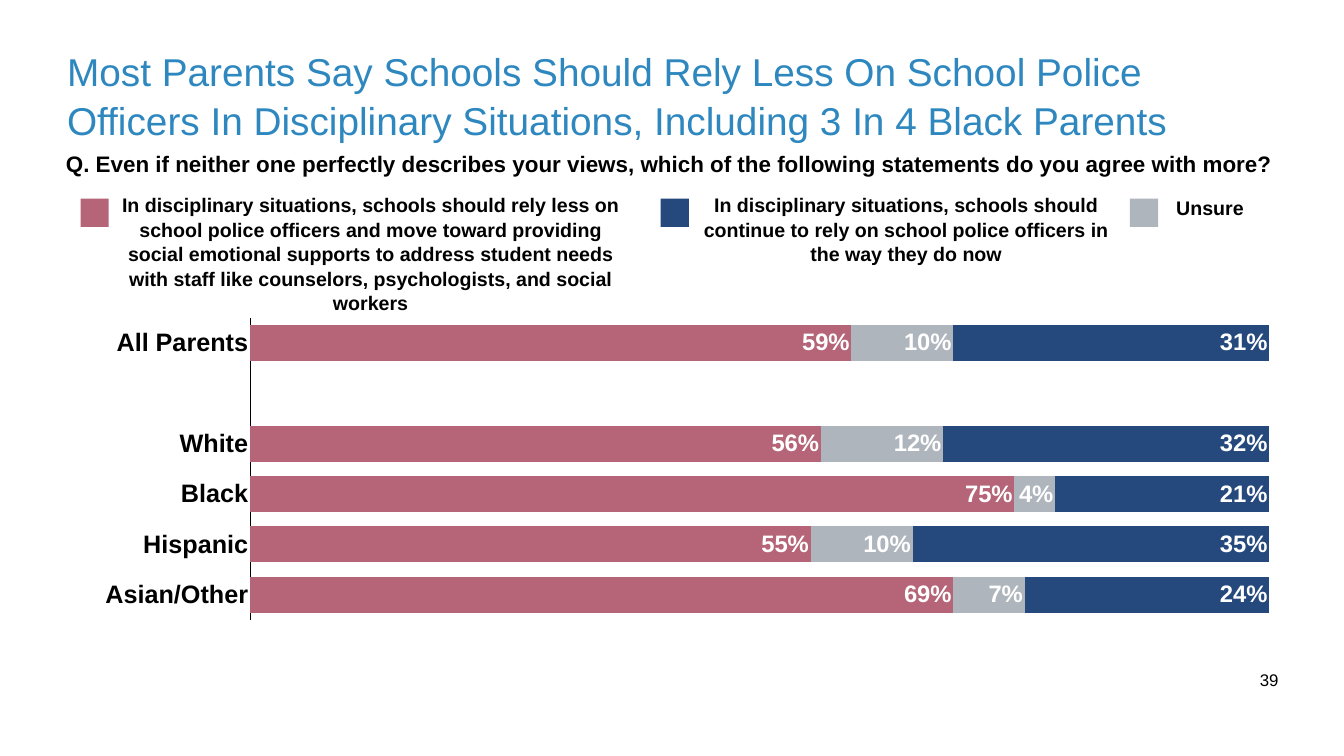
from lxml import etree
from pptx import Presentation
from pptx.chart.data import CategoryChartData
from pptx.dml.color import RGBColor
from pptx.enum.chart import XL_CHART_TYPE as ChartType
from pptx.enum.chart import XL_LABEL_POSITION as LabelPosition
from pptx.enum.chart import XL_TICK_LABEL_POSITION as TickLabelPosition
from pptx.enum.chart import XL_TICK_MARK as TickMark
from pptx.enum.shapes import MSO_SHAPE as Shape
from pptx.enum.text import MSO_ANCHOR as Anchor
from pptx.enum.text import PP_ALIGN as Align
from pptx.oxml.ns import qn
from pptx.util import Cm, Pt

FONT = "Arial"
BLACK, WHITE, TITLE_BLUE = "000000", "FFFFFF", "2E88BF"
ROSE, GREY, NAVY = "B56577", "AEB5BC", "25497C"

CATEGORIES = ["All Parents", "", "White", "Black", "Hispanic", "Asian/Other"]
SERIES = [
    ("Rely less", ROSE, [0.59, None, 0.56, 0.75, 0.55, 0.69]),
    ("Unsure", GREY, [0.10, None, 0.12, 0.04, 0.10, 0.07]),
    ("Continue to rely", NAVY, [0.31, None, 0.32, 0.21, 0.35, 0.24]),
]
# colour, swatch left, text, text box (left, top, width, height)
LEGEND = [
    (ROSE, 4.06,
     "In disciplinary situations, schools should rely less on school police "
     "officers and move toward providing social emotional supports to address "
     "student needs with staff like counselors, psychologists, and social workers",
     (5.49, 9.5, 26.37, 5.18)),
    (NAVY, 33.3,
     "In disciplinary situations, schools should continue to rely on school "
     "police officers in the way they do now",
     (34.72, 9.5, 21.89, 3.89)),
    (GREY, 56.95, "Unsure", (54.61, 9.63, 12.75, 1.55)),
]
SWATCH_TOP, SWATCH_SIZE = 10.01, 1.42
PLOT_AREA = {"x": 0.152, "y": 0.084, "w": 0.843, "h": 0.866}


def rgb(color):
    return RGBColor.from_string(color)


def style_font(font, size, color=BLACK, bold=False):
    font.name = FONT
    font.size = Pt(size)
    font.bold = bold
    font.color.rgb = rgb(color)


def add_text(slide, text, box, size, color=BLACK, bold=False,
             align=Align.LEFT, anchor=Anchor.TOP, wrap=True):
    shape = slide.shapes.add_textbox(*map(Cm, box))
    frame = shape.text_frame
    frame.word_wrap = wrap
    frame.vertical_anchor = anchor
    frame.margin_left = frame.margin_right = Cm(0.2)
    frame.margin_top = frame.margin_bottom = Cm(0.2)
    paragraph = frame.paragraphs[0]
    paragraph.alignment = align
    paragraph.line_spacing = 1.04
    run = paragraph.add_run()
    run.text = text
    style_font(run.font, size, color, bold)


def add_swatch(slide, left, color):
    shape = slide.shapes.add_shape(
        Shape.RECTANGLE, Cm(left), Cm(SWATCH_TOP), Cm(SWATCH_SIZE), Cm(SWATCH_SIZE))
    shape.shadow.inherit = False
    shape.fill.solid()
    shape.fill.fore_color.rgb = rgb(color)
    shape.line.fill.background()


def set_plot_area(chart):
    """Fix the inner plot area as fractions of the chart."""
    plot_area = chart.element.find(".//" + qn("c:plotArea"))
    for old_layout in plot_area.findall(qn("c:layout")):
        plot_area.remove(old_layout)
    layout = etree.Element(qn("c:layout"))
    manual = etree.SubElement(layout, qn("c:manualLayout"))
    settings = {"layoutTarget": "inner", "xMode": "edge", "yMode": "edge", **PLOT_AREA}
    for name, value in settings.items():
        etree.SubElement(manual, qn("c:" + name)).set("val", str(value))
    plot_area.insert(0, layout)


def style_axes(chart):
    for axis in (chart.category_axis, chart.value_axis):
        axis.has_major_gridlines = False
        axis.major_tick_mark = axis.minor_tick_mark = TickMark.NONE
        style_font(axis.tick_labels.font, 36, bold=True)
    category_axis, value_axis = chart.category_axis, chart.value_axis
    category_axis.reverse_order = True
    category_axis.format.line.color.rgb = rgb(BLACK)
    category_axis.format.line.width = Pt(1)
    value_axis.minimum_scale, value_axis.maximum_scale = 0, 1
    value_axis.major_unit = 0.25
    value_axis.tick_label_position = TickLabelPosition.NONE
    value_axis.format.line.fill.background()


def style_series(series, color):
    series.format.fill.solid()
    series.format.fill.fore_color.rgb = rgb(color)
    labels = series.data_labels
    labels.show_value = True
    labels.position = LabelPosition.INSIDE_END
    labels.number_format = "#,##0%"
    labels.number_format_is_linked = False
    style_font(labels.font, 34, WHITE, bold=True)


def add_opinion_chart(slide, box):
    data = CategoryChartData()
    data.categories = CATEGORIES
    for name, _, values in SERIES:
        data.add_series(name, values)
    chart = slide.shapes.add_chart(ChartType.BAR_STACKED, *map(Cm, box), data).chart
    chart.has_legend = False
    chart.has_title = False
    style_font(chart.font, 10)
    plot = chart.plots[0]
    plot.vary_by_categories = False
    plot.gap_width, plot.overlap = 40, 100
    for series, (_, color, _) in zip(plot.series, SERIES):
        style_series(series, color)
    style_axes(chart)
    set_plot_area(chart)


def main():
    presentation = Presentation()
    presentation.slide_width, presentation.slide_height = Cm(67.74), Cm(38.1)
    slide = presentation.slides.add_slide(presentation.slide_layouts[6])

    add_text(slide, "Most Parents Say Schools Should Rely Less On School Police "
             "Officers In Disciplinary Situations, Including 3 In 4 Black Parents",
             (3.18, 2.13, 61.39, 5.28), 55.4, TITLE_BLUE, anchor=Anchor.MIDDLE)
    add_text(slide, "39", (63.27, 33.5, 1.4, 1.42), 24, align=Align.CENTER, wrap=False)
    for color, swatch_left, text, box in LEGEND:
        add_text(slide, text, box, 28, bold=True, align=Align.CENTER)
        add_swatch(slide, swatch_left, color)
    add_text(slide, "Q. Even if neither one perfectly describes your views, which of "
             "the following statements do you agree with more?",
             (3.12, 7.32, 61.39, 3), 32, bold=True)
    add_opinion_chart(slide, (3.35, 14.53, 60.93, 17.6))

    presentation.save("out.pptx")


if __name__ == "__main__":
    main()
